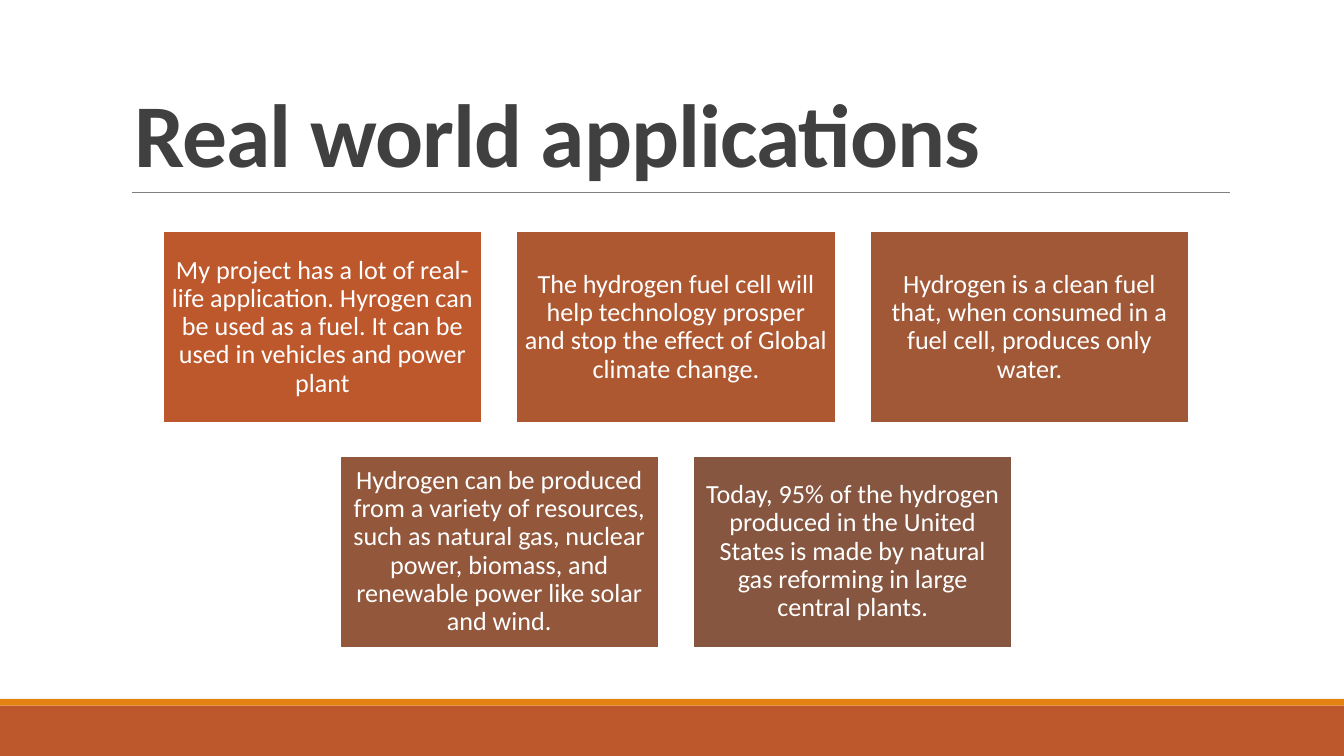
from dataclasses import dataclass

from lxml.etree import SubElement
from pptx import Presentation
from pptx.dml.color import RGBColor
from pptx.enum.shapes import MSO_CONNECTOR, MSO_SHAPE
from pptx.enum.text import MSO_ANCHOR, MSO_AUTO_SIZE, PP_ALIGN
from pptx.oxml.ns import qn
from pptx.util import Inches, Pt

TITLE = "Real world applications"
CARD_ROWS = [
    [
        ("My project has a lot of real-life application. Hyrogen can be used as a fuel. "
         "It can be used in vehicles and power plant", "BD582C"),
        ("The hydrogen fuel cell will help technology prosper and stop the effect of "
         "Global climate change.", "AE5832"),
        ("Hydrogen is a clean fuel that, when consumed in a fuel cell, produces only "
         "water.", "A05837"),
    ],
    [
        ("Hydrogen can be produced from a variety of resources, such as natural gas, "
         "nuclear power, biomass, and renewable power like solar and wind.", "93573C"),
        ("Today, 95% of the hydrogen produced in the United States is made by natural "
         "gas reforming in large central plants.", "865640"),
    ],
]


@dataclass(frozen=True)
class Theme:
    font: str = "Calibri"
    title_size: int = 48
    card_size: int = 14
    title: str = "404040"
    rule: str = "808080"
    band: str = "BD582C"
    stripe: str = "E48312"
    white: str = "FFFFFF"


THEME = Theme()
CARD_WIDTH, CARD_HEIGHT, GAP = 2.38, 1.43, 0.24
ROW_CENTER, FIRST_ROW_TOP = 5.03, 1.72
COLUMN_GAP = 0.25


def color(value):
    return RGBColor.from_string(value)


def add_box(slide, left, top, width, height, fill):
    box = slide.shapes.add_shape(
        MSO_SHAPE.RECTANGLE, Inches(left), Inches(top), Inches(width), Inches(height))
    box.shadow.inherit = False
    box.fill.solid()
    box.fill.fore_color.rgb = color(fill)
    box.line.fill.background()
    return box


def write(frame, text, size, ink, align, spacing, bold=False):
    para = frame.paragraphs[0]
    para.alignment = align
    para.line_spacing = spacing
    span = para.add_run()
    span.text = text
    span.font.name = THEME.font
    span.font.size = Pt(size)
    span.font.bold = bold
    span.font.color.rgb = color(ink)
    return span


def add_title(slide):
    title = slide.shapes.title
    title.left, title.top = Inches(0.9), Inches(0.24)
    title.width, title.height = Inches(8.25), Inches(1.19)
    frame = title.text_frame
    frame.word_wrap = True
    frame.auto_size = MSO_AUTO_SIZE.NONE
    frame.vertical_anchor = MSO_ANCHOR.BOTTOM
    span = write(frame, TITLE, THEME.title_size, THEME.title, PP_ALIGN.LEFT, 0.85, True)
    span.font._element.set("spc", "-50")


def add_rule(slide):
    rule = slide.shapes.add_connector(
        MSO_CONNECTOR.STRAIGHT, Inches(0.98), Inches(1.43), Inches(9.15), Inches(1.43))
    rule.line.color.rgb = color(THEME.rule)
    rule.line.width = Pt(0.5)
    SubElement(rule._element.spPr, qn("a:effectLst"))


def add_card(slide, left, top, text, fill):
    card = add_box(slide, left, top, CARD_WIDTH, CARD_HEIGHT, fill)
    card.line.color.rgb = color(THEME.white)
    card.line.width = Pt(1.25)
    frame = card.text_frame
    frame.word_wrap = True
    frame.vertical_anchor = MSO_ANCHOR.MIDDLE
    frame.margin_left = frame.margin_right = Inches(0.06)
    frame.margin_top = frame.margin_bottom = Inches(0.06)
    write(frame, text, THEME.card_size, THEME.white, PP_ALIGN.CENTER, 0.9)


def add_cards(slide):
    for row, cards in enumerate(CARD_ROWS):
        row_width = len(cards) * (CARD_WIDTH + COLUMN_GAP) - COLUMN_GAP
        top = FIRST_ROW_TOP + row * (CARD_HEIGHT + GAP)
        for column, (text, fill) in enumerate(cards):
            left = ROW_CENTER - row_width / 2 + column * (CARD_WIDTH + COLUMN_GAP)
            add_card(slide, left, top, text, fill)


def main():
    deck = Presentation()
    deck.slide_width = Inches(10)
    deck.slide_height = deck.slide_width * 9 // 16
    page = deck.slides.add_slide(deck.slide_layouts[5])
    add_box(page, 0, 5.25, 10, 0.38, THEME.band)
    add_box(page, 0, 5.2, 10, 0.05, THEME.stripe)
    add_rule(page)
    add_title(page)
    add_cards(page)
    deck.save("out.pptx")


if __name__ == "__main__":
    main()
